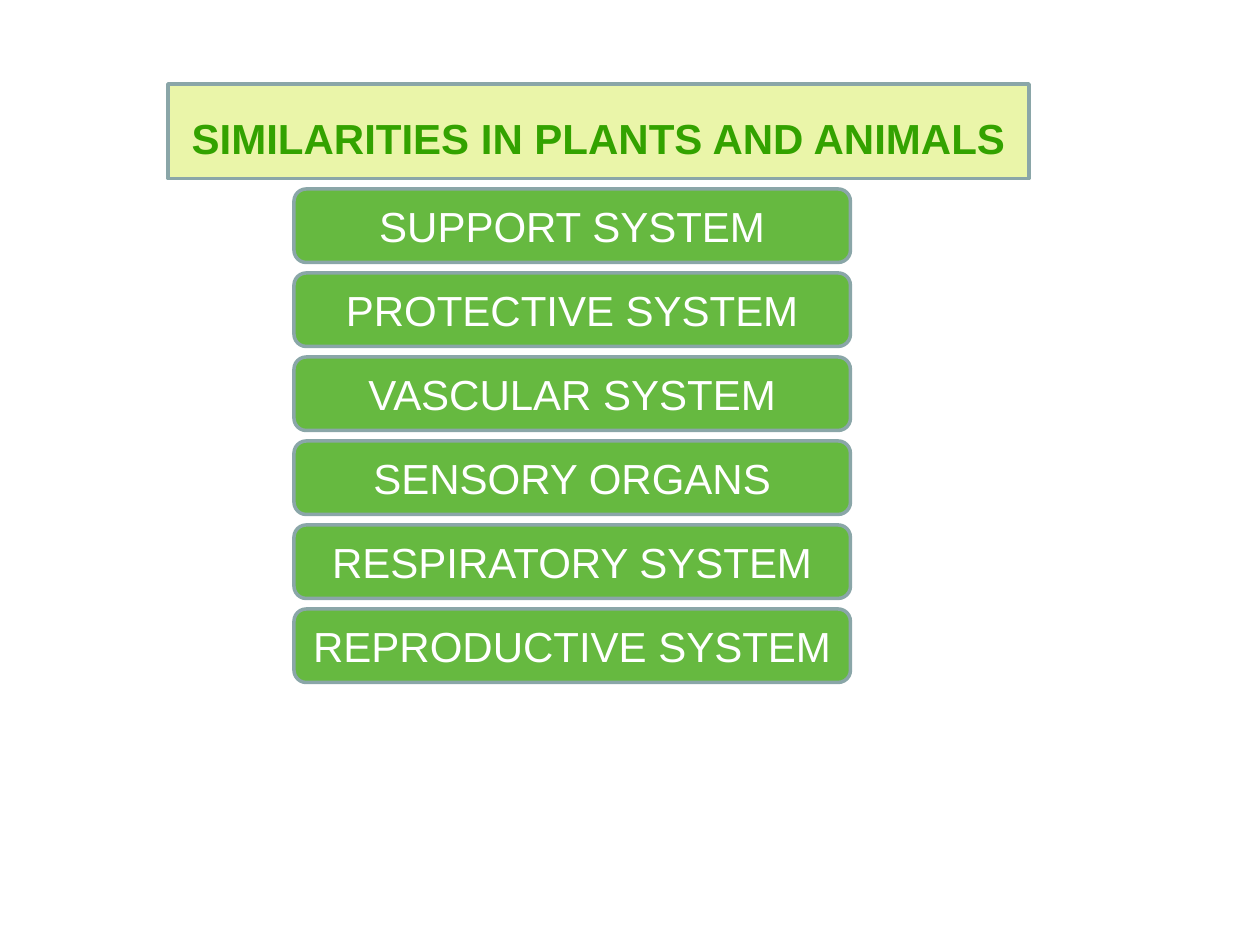
from dataclasses import dataclass

from lxml.etree import SubElement
from pptx import Presentation
from pptx.dml.color import RGBColor
from pptx.enum.shapes import MSO_SHAPE as Preset
from pptx.enum.text import MSO_ANCHOR as Anchor, MSO_AUTO_SIZE as AutoSize, PP_ALIGN as Align
from pptx.oxml.ns import qn
from pptx.util import Pt

GREEN = "33A200"
PALE_GREEN = "EAF5A9"
GREY_BLUE = "8AA6A8"
WHITE = "FFFFFF"

FIRST_TOP, ROW_PITCH = 108, 48


@dataclass
class Panel:
    text: str
    left: float
    top: float
    width: float
    height: float
    fill: str
    ink: str
    bold: bool = False
    opacity: int = 100
    margin_top: float = 3.6


def color(hex_code: str) -> RGBColor:
    return RGBColor.from_string(hex_code)


def place(shape, panel: Panel) -> None:
    shape.left, shape.top = Pt(panel.left), Pt(panel.top)
    shape.width, shape.height = Pt(panel.width), Pt(panel.height)


def paint(shape, panel: Panel) -> None:
    shape.fill.solid()
    shape.fill.fore_color.rgb = color(panel.fill)
    if panel.opacity < 100:
        fill_color = shape.fill._xPr.find(qn("a:solidFill"))[0]
        SubElement(fill_color, qn("a:alpha"), val=str(panel.opacity * 1000))
    shape.line.color.rgb = color(GREY_BLUE)
    shape.line.width = Pt(2)


def write(shape, panel: Panel) -> None:
    frame = shape.text_frame
    frame.word_wrap = True
    frame.auto_size = AutoSize.NONE
    frame.vertical_anchor = Anchor.MIDDLE
    frame.margin_top = Pt(panel.margin_top)
    paragraph = frame.paragraphs[0]
    paragraph.alignment = Align.CENTER
    run = paragraph.add_run()
    run.text = panel.text
    run.font.name = "Arial"
    run.font.size = Pt(24)
    run.font.bold = panel.bold
    run.font.color.rgb = color(panel.ink)


def draw_heading(slide, panel: Panel) -> None:
    heading = slide.shapes.title
    place(heading, panel)
    # Give the title placeholder rounded corners
    outline = SubElement(heading._element.spPr, qn("a:prstGeom"), prst="roundRect")
    SubElement(outline, qn("a:avLst"))
    paint(heading, panel)
    write(heading, panel)


def draw_system(slide, panel: Panel) -> None:
    box = slide.shapes.add_shape(Preset.ROUNDED_RECTANGLE, 0, 0, 0, 0)
    box.shadow.inherit = False
    place(box, panel)
    paint(box, panel)
    write(box, panel)


def main() -> None:
    deck = Presentation()
    deck.slide_width, deck.slide_height = Pt(720), Pt(540)
    slide = deck.slides.add_slide(deck.slide_layouts[5])

    # Heading, with its text a little below the middle
    draw_heading(slide, Panel("SIMILARITIES IN PLANTS AND ANIMALS", 96, 48, 492, 54,
                              PALE_GREEN, GREEN, bold=True, margin_top=11))

    # Stack of shared systems
    systems = ["SUPPORT SYSTEM", "PROTECTIVE SYSTEM", "VASCULAR SYSTEM",
               "SENSORY ORGANS", "RESPIRATORY SYSTEM", "REPRODUCTIVE SYSTEM"]
    for row, system in enumerate(systems):
        draw_system(slide, Panel(system, 168, FIRST_TOP + row * ROW_PITCH, 318, 42,
                                 GREEN, WHITE, opacity=75))

    deck.save("out.pptx")


if __name__ == "__main__":
    main()
